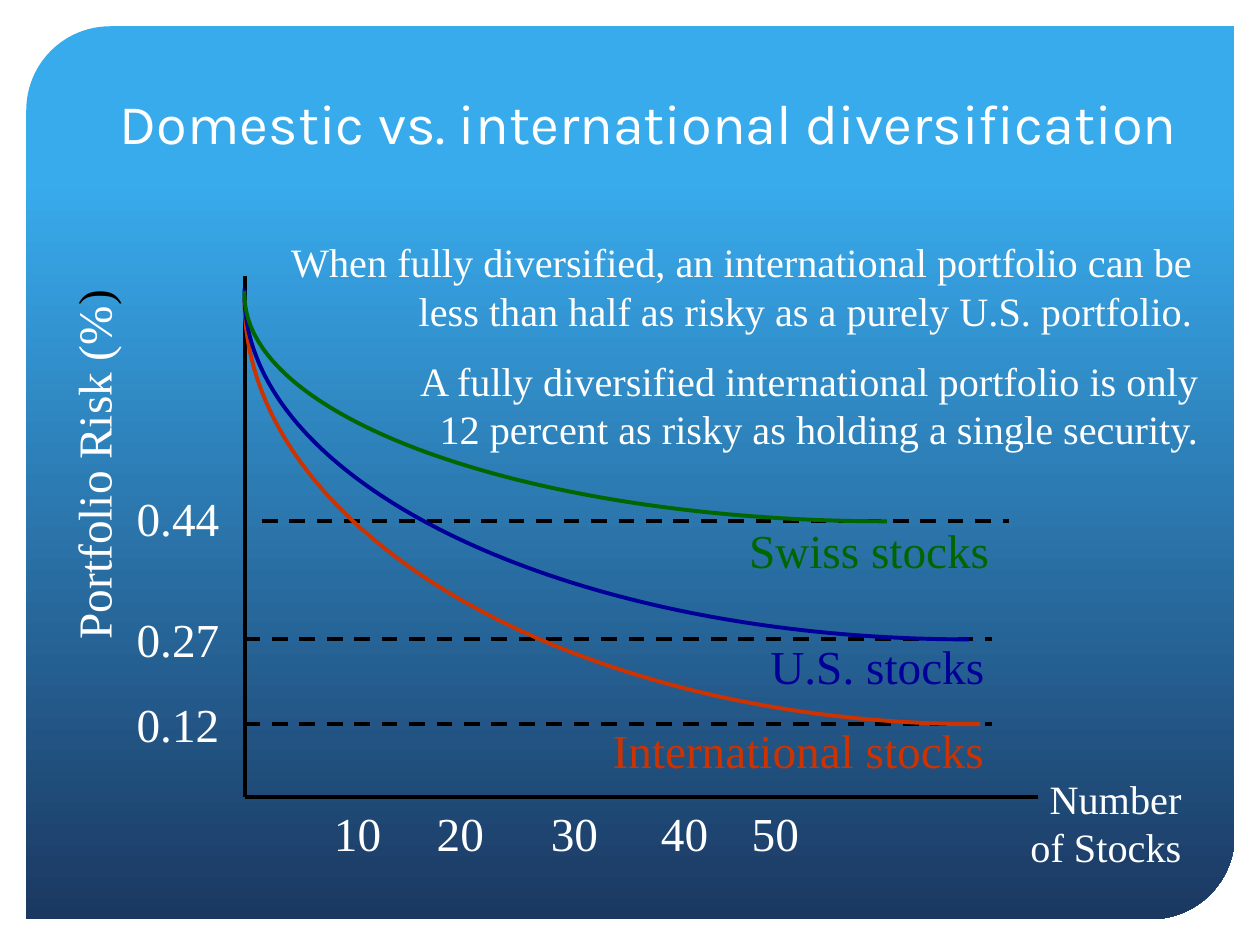
"""Build a slide on domestic versus international diversification."""
import pptx
import pptx.dml.color
import pptx.enum.dml
import pptx.enum.shapes
import pptx.enum.text
import pptx.oxml.ns
import pptx.util
from lxml import etree

Cm, Pt = pptx.util.Cm, pptx.util.Pt
Align = pptx.enum.text.PP_ALIGN
Anchor = pptx.enum.text.MSO_ANCHOR
Shape = pptx.enum.shapes.MSO_SHAPE
qn = pptx.oxml.ns.qn

HUES = {"white": "FFFFFF", "black": "000000", "sky": "38ABED", "navy": "1B3861",
        "red": "CC3300", "blue": "000099", "green": "006600"}
SERIF = "Times New Roman"
FORMS = {
    "title": {"name": "Karla", "size": Pt(32)},
    "label": {"name": SERIF, "size": Pt(27)},
    "note": {"name": SERIF, "size": Pt(23)},
}
FRAME = {"word_wrap": True, "margin_left": Cm(0.28), "margin_right": Cm(0.28),
         "margin_top": Cm(0.15), "margin_bottom": Cm(0.15)}

PANEL = (0.53, 0.53, 24.36, 18)
TITLE = ("Domestic vs. international diversification", (2.14, 1.06, 22.3, 2.24))
LEFT, BASE, TOP, RIGHT = 4.93, 16.07, 5.56, 20.93
LEVELS = [("0.44", 10.51, 5.28, 9.72), ("0.27", 12.89, LEFT, 12.16),
          ("0.12", 14.6, LEFT, 13.87)]
SPAN = 15.06
BEND = 0.55
CURVES = [
    ("International stocks", "red", 6.05, 6.05, 14.6, 19.76, (12.07, 14.4, 8.71, 1.42)),
    ("U.S. stocks", "blue", 5.82, 5.94, 12.89, 19.53, (15.25, 12.7, 6.35, 1.42)),
    ("Swiss stocks", "green", 5.87, 5.94, 10.51, 17.88, (14.82, 10.36, 6.35, 1.42)),
]
TICKS = [("10", 2.46), ("20", 4.53), ("30", 6.83), ("40", 9.05), ("50", 10.88)]
NOTES = [
    ("Number of Stocks", (20.11, 15.45, 3.99, 2.24)),
    ("When fully diversified, an international portfolio can be less than half "
     "as risky as a purely U.S. portfolio.", (5.52, 4.64, 18.82, 2.26)),
    ("A fully diversified international portfolio is only 12 percent as risky "
     "as holding a single security.", (7.46, 7.03, 17, 2.26)),
]


def tint(hue):
    return pptx.dml.color.RGBColor.from_string(HUES[hue])


def write(box, runs, form, align=Align.LEFT, tabs=()):
    text = slide.shapes.add_textbox(*map(Cm, box))
    frame = text.text_frame
    for key, val in FRAME.items():
        setattr(frame, key, val)
    para = frame.paragraphs[0]
    para.alignment = align
    if tabs:
        stops = etree.SubElement(para._p.get_or_add_pPr(), qn("a:tabLst"))
        for pos in tabs:
            etree.SubElement(stops, qn("a:tab"), pos=str(int(Cm(pos))), algn="ctr")
    for words, hue in runs:
        run = para.add_run()
        run.text = words
        for key, val in FORMS[form].items():
            setattr(run.font, key, val)
        run.font.color.rgb = tint(hue)
    return text


def rule(start, end, dash=False):
    line = slide.shapes.add_connector(
        pptx.enum.shapes.MSO_CONNECTOR.STRAIGHT, *map(Cm, start + end))
    line.line.color.rgb = tint("black")
    line.line.width = Pt(2.25)
    if dash:
        line.line.dash_style = pptx.enum.dml.MSO_LINE.DASH
    etree.SubElement(line._element.spPr, qn("a:effectLst"))


def curve(hue, tip, top, low, right):
    build = slide.shapes.build_freeform(Cm(LEFT), Cm(tip))
    build.add_line_segments([(Cm(LEFT), Cm(top)), (Cm(right), Cm(low))], close=False)
    arc = build.convert_to_shape()
    last = arc._element.findall(".//" + qn("a:lnTo"))[-1]
    last.tag = qn("a:cubicBezTo")
    bends = [(LEFT, top + BEND * (low - top)), (right - BEND * (right - LEFT), low)]
    for i, (x, y) in enumerate(bends):
        spot = etree.Element(qn("a:pt"), x=str(int(Cm(x - LEFT))), y=str(int(Cm(y - tip))))
        last.insert(i, spot)
    arc.shadow.inherit = False
    arc.fill.background()
    arc.line.color.rgb = tint(hue)
    arc.line.width = Pt(2.25)


deck = pptx.Presentation()
deck.slide_width, deck.slide_height = Cm(25.4), Cm(19.05)
slide = deck.slides.add_slide(deck.slide_layouts[6])

panel = slide.shapes.add_shape(Shape.ROUND_2_DIAG_RECTANGLE, *map(Cm, PANEL))
panel.shadow.inherit = False
panel.adjustments[0], panel.adjustments[1] = 0.094, 0
panel.line.fill.background()
panel.fill.gradient()
panel.fill.gradient_angle = 270
for stop, hue, pos in zip(panel.fill.gradient_stops, ("sky", "navy"), (0.17, 1)):
    stop.color.rgb = tint(hue)
    stop.position = pos

head = write(TITLE[1], [(TITLE[0], "white")], "title")
head.text_frame.vertical_anchor = Anchor.BOTTOM

rule((LEFT, BASE), (LEFT, TOP))
rule((LEFT, BASE), (RIGHT, BASE))
for words, y, x, top in LEVELS:
    rule((x, y), (x + SPAN, y), dash=True)
    write((2.34, top, 2.36, 1.47), [(words, "white")], "label", Align.RIGHT)

side = write((-2.15, 8.87, 8.05, 1.45),
             [("Portfolio Risk (%", "white"), (")", "black")], "label", Align.RIGHT)
side.rotation = 270
marks = "".join("\t" + words for words, pos in TICKS)
write((4.47, BASE, 16, 1.47), [(marks, "white")], "label",
      tabs=[pos for words, pos in TICKS])

for words, hue, tip, top, low, right, box in CURVES:
    curve(hue, tip, top, low, right)
    write(box, [(words, hue)], "label")
for words, box in NOTES:
    write(box, [(words, "white")], "note", Align.RIGHT)

deck.save("out.pptx")
